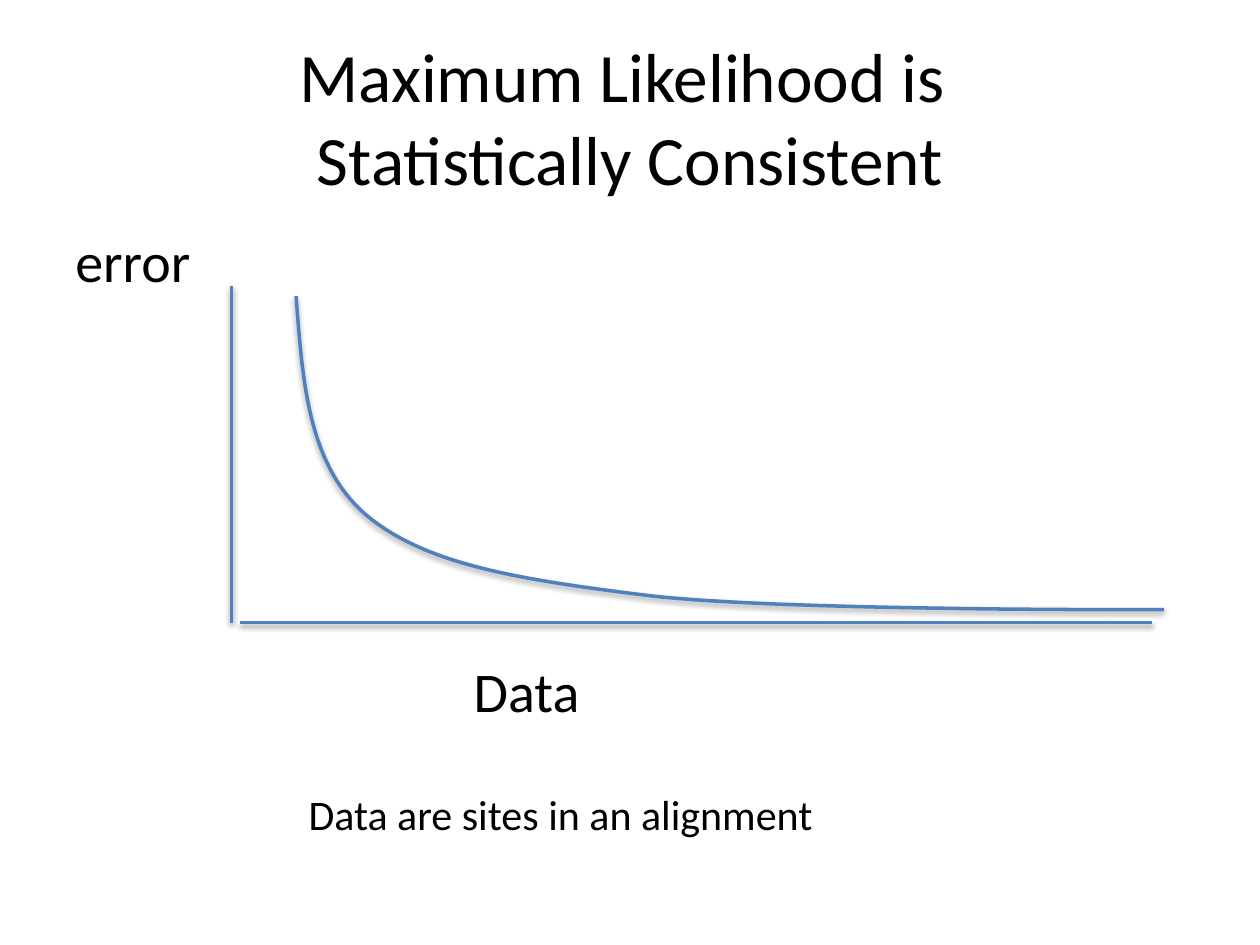
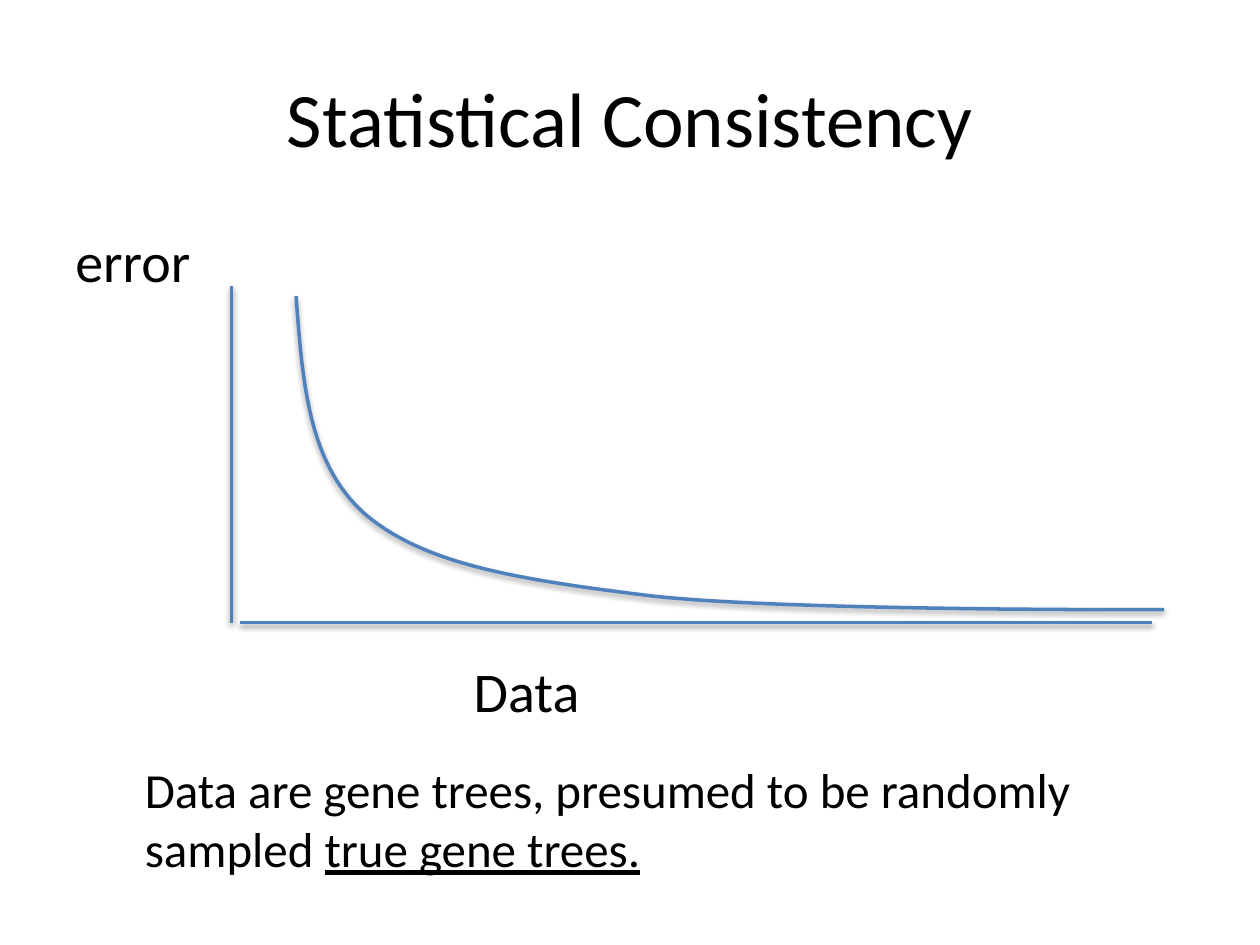
from dataclasses import dataclass

from lxml import etree
from pptx import Presentation
from pptx.dml.color import RGBColor
from pptx.enum.shapes import MSO_CONNECTOR
from pptx.enum.text import MSO_ANCHOR, PP_ALIGN
from pptx.oxml import parse_xml
from pptx.util import Cm, Pt

STRAIGHT = MSO_CONNECTOR.STRAIGHT
LEFT, CENTER = PP_ALIGN.LEFT, PP_ALIGN.CENTER
TOP, MIDDLE = MSO_ANCHOR.TOP, MSO_ANCHOR.MIDDLE
BLANK_LAYOUT = 6


@dataclass(frozen=True)
class Theme:
    font: str = "Calibri"
    text: RGBColor = RGBColor(0, 0, 0)
    accent: RGBColor = RGBColor(0x4F, 0x81, 0xBD)
    label_size: float = 32
    line_width: float = 2


THEME = Theme()

# Content: each caption is a list of (text, underlined) runs; boxes are in cm
SLIDES = [
    {
        "title": "Maximum Likelihood is \vStatistically Consistent",
        "title_size": 39.6,
        "caption": [("Data are sites in an alignment", False)],
        "caption_box": (5.97, 15.77, 11.02, 1.27),
        "caption_size": 24,
        "caption_wraps": False,
    },
    {
        "title": "Statistical Consistency",
        "title_size": 44,
        "caption": [
            ("Data are gene trees, presumed to be randomly sampled ", False),
            ("true gene trees.", True),
        ],
        "caption_box": (2.67, 15.19, 20.55, 2.64),
        "caption_size": 28,
        "caption_wraps": True,
    },
]

# Shared layout, in cm
TITLE_BOX = (1.27, 0.76, 22.86, 3.18)
AXIS_LABELS = [
    ("error", (1.27, 4.45, 22.86, 12.57)),
    ("Data", (9.3, 13.11, 6.5, 1.63)),
]
AXES = [
    (4.67, 5.77, 4.67, 12.55),
    (4.83, 12.55, 23.22, 12.55),
]
CURVE_START = (5.97, 5.97)
CURVE_SEGMENTS = [
    ((6.1, 7.67), (6.2, 9.37), (7.39, 10.39)),
    ((8.59, 11.38), (10.41, 11.68), (13.11, 12.01)),
    ((15.77, 12.32), (23.47, 12.29), (23.47, 12.29)),
]
STEPS_PER_SEGMENT = 30

SHADOW_XML = (
    '<a:effectLst xmlns:a="http://schemas.openxmlformats.org/drawingml/2006/main">'
    '<a:outerShdw blurRad="40000" dist="20000" dir="5400000" rotWithShape="0">'
    '<a:srgbClr val="000000"><a:alpha val="38000"/></a:srgbClr>'
    "</a:outerShdw></a:effectLst>"
)


def add_text(page, runs, box, size, align=LEFT, anchor=TOP, wrap=True):
    shape = page.shapes.add_textbox(*map(Cm, box))
    frame = shape.text_frame
    frame.word_wrap = wrap
    frame.vertical_anchor = anchor
    para = frame.paragraphs[0]
    para.alignment = align
    para.font.size = Pt(size)
    para.text = runs[0][0]
    for text, _ in runs[1:]:
        para.add_run().text = text
    for span, (_, underlined) in zip(para.runs, runs):
        span.font.underline = underlined or None
    for span in para.runs:
        span.font.name = THEME.font
        span.font.size = Pt(size)
        span.font.color.rgb = THEME.text


def style_line(shape):
    shape.line.color.rgb = THEME.accent
    shape.line.width = Pt(THEME.line_width)
    shape.element.spPr.append(parse_xml(etree.tostring(etree.fromstring(SHADOW_XML))))


def bezier_point(points, t):
    weights = ((1 - t) ** 3, 3 * t * (1 - t) ** 2, 3 * t**2 * (1 - t), t**3)
    return tuple(
        Cm(sum(weight * point[axis] for weight, point in zip(weights, points)))
        for axis in (0, 1)
    )


def add_error_curve(page):
    vertices, start = [], CURVE_START
    for segment in CURVE_SEGMENTS:
        points = (start, *segment)
        vertices += [
            bezier_point(points, step / STEPS_PER_SEGMENT)
            for step in range(1, STEPS_PER_SEGMENT + 1)
        ]
        start = segment[-1]
    builder = page.shapes.build_freeform(*map(Cm, CURVE_START))
    builder.add_line_segments(vertices, close=False)
    curve = builder.convert_to_shape()
    curve.fill.background()
    style_line(curve)


def add_page(deck, content):
    page = deck.slides.add_slide(deck.slide_layouts[BLANK_LAYOUT])

    # Title
    add_text(page, [(content["title"], False)], TITLE_BOX,
             content["title_size"], CENTER, MIDDLE)

    # Error plot
    for label, box in AXIS_LABELS:
        add_text(page, [(label, False)], box, THEME.label_size)
    for axis in AXES:
        style_line(page.shapes.add_connector(STRAIGHT, *map(Cm, axis)))
    add_error_curve(page)

    # Caption
    add_text(page, content["caption"], content["caption_box"],
             content["caption_size"], wrap=content["caption_wraps"])


def main():
    deck = Presentation()
    deck.slide_width, deck.slide_height = Cm(25.4), Cm(19.05)
    for content in SLIDES:
        add_page(deck, content)
    deck.save("out.pptx")


if __name__ == "__main__":
    main()
